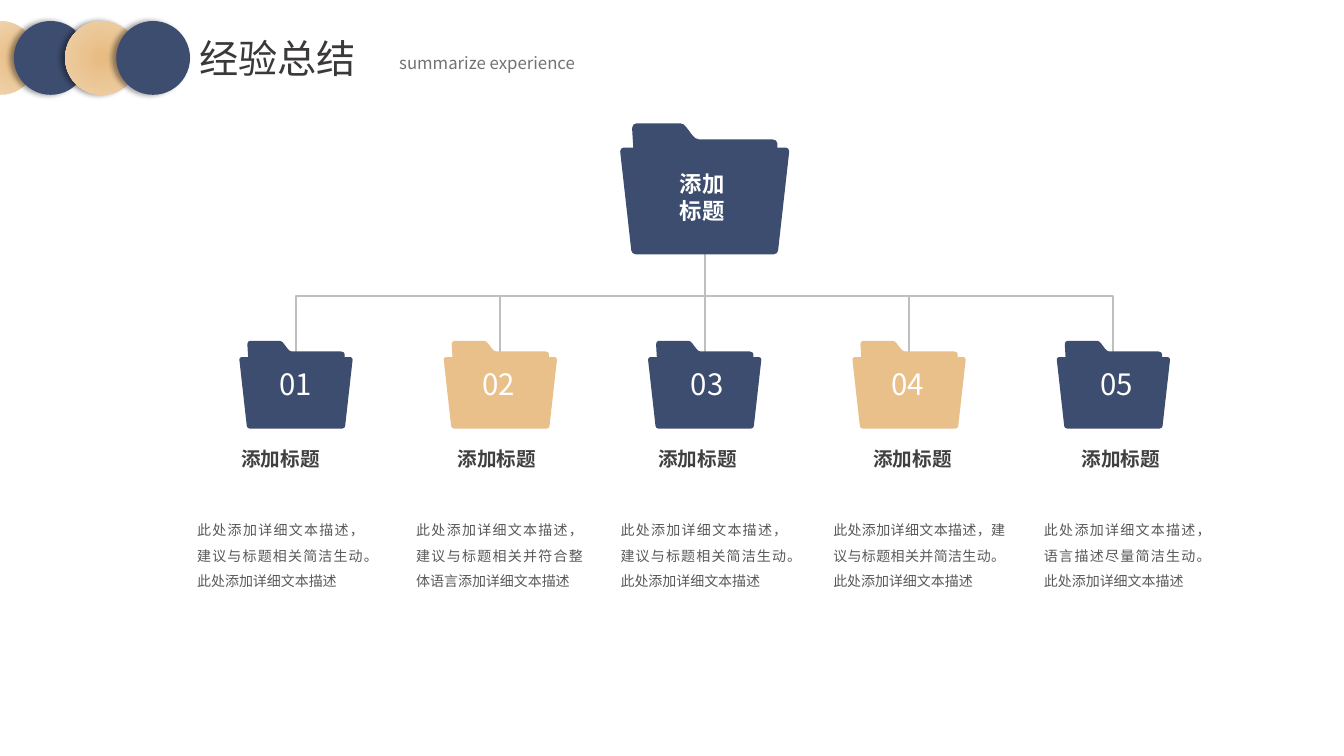
from lxml import etree
from pptx import Presentation
from pptx.dml.color import RGBColor
from pptx.enum import shapes, text
from pptx.oxml import parse_xml
from pptx.oxml.ns import nsdecls, qn
from pptx.util import Cm, Pt

NAVY = RGBColor(0x3D, 0x4D, 0x6F)
SAND = RGBColor(0xE9, 0xC0, 0x89)
SAND_INNER = RGBColor(0xE7, 0xBB, 0x81)
SAND_OUTER = RGBColor(0xEF, 0xD2, 0xAB)
WHITE = RGBColor(0xFF, 0xFF, 0xFF)
TITLE_GREY = RGBColor(0x3B, 0x38, 0x38)
SUBTITLE_GREY = RGBColor(0x76, 0x71, 0x71)
HEADING_GREY = RGBColor(0x40, 0x40, 0x40)
BODY_GREY = RGBColor(0x59, 0x59, 0x59)
LINE_GREY = RGBColor(0xBF, 0xBF, 0xBF)
FONT = "Noto Sans CJK SC"
SMALL_INSETS = (0.2, 0.1)

CENTER_X, PITCH = 17.76, 5.15
BUS_Y, BRANCH_END_Y = 7.45, 9.19
CIRCLE_SIZE, CIRCLE_TOP, CIRCLE_STEP = 1.86, 0.53, 1.29

# Outlines in cm from the top centre: one point is a line, three are a curve.
FOLDER_TAB = [
    [(1.83, 0.62)], [(1.83, 0.5)], [(1.83, 0.45), (1.78, 0.4), (1.7, 0.4)],
    [(-0.15, 0.4)], [(-0.2, 0.4), (-0.27, 0.36), (-0.31, 0.3)],
    [(-0.46, 0.1)], [(-0.5, 0.04), (-0.55, 0), (-0.61, 0)],
    [(-1.73, 0)], [(-1.78, 0), (-1.83, 0.05), (-1.83, 0.12)], [(-1.8, 0.62)],
]
FOLDER_BODY = [
    [(1.85, 3.2)], [(1.85, 3.25), (1.8, 3.3), (1.74, 3.3)],
    [(-1.74, 3.3)], [(-1.8, 3.3), (-1.85, 3.25), (-1.85, 3.2)],
    [(-2.13, 0.71)], [(-2.13, 0.66), (-2.1, 0.61), (-2.05, 0.61)],
    [(2.05, 0.61)], [(2.1, 0.61), (2.13, 0.66), (2.13, 0.71)],
]
HALF_CIRCLE = [
    [(0, 0)], [(0.51, 0), (0.93, 0.42), (0.93, 0.93)],
    [(0.93, 1.44), (0.51, 1.86), (0, 1.86)],
]

# Colour, number left, heading centre, description left and width, description
BRANCHES = [
    (NAVY, 5.93, 7.07, 4.77, 4.6, "此处添加详细文本描述，建议与标题相关简洁生动。此处添加详细文本描述"),
    (SAND, 11.05, 12.52, 10.29, 4.6, "此处添加详细文本描述，建议与标题相关并符合整体语言添加详细文本描述"),
    (NAVY, 16.3, 17.58, 15.44, 4.6, "此处添加详细文本描述，建议与标题相关简洁生动。此处添加详细文本描述"),
    (SAND, 21.35, 23, 20.8, 4.73, "此处添加详细文本描述，建议与标题相关并简洁生动。此处添加详细文本描述"),
    (NAVY, 26.62, 28.25, 26.11, 4.6, "此处添加详细文本描述，语言描述尽量简洁生动。此处添加详细文本描述"),
]


def add_text(slide, content, left, top, width, height, *, size, color, bold=False,
             align=text.PP_ALIGN.LEFT, spacing=None, insets=(0.25, 0.13), grow=True):
    box = slide.shapes.add_textbox(Cm(left), Cm(top), Cm(width), Cm(height))
    frame = box.text_frame
    frame.word_wrap = True
    frame.auto_size = text.MSO_AUTO_SIZE.SHAPE_TO_FIT_TEXT if grow else text.MSO_AUTO_SIZE.NONE
    frame.margin_left = frame.margin_right = Cm(insets[0])
    frame.margin_top = frame.margin_bottom = Cm(insets[1])
    paragraph = frame.paragraphs[0]
    paragraph.alignment = align
    paragraph.line_spacing = spacing
    run = paragraph.add_run()
    run.text = content
    font = run.font
    font.size, font.bold, font.name, font.color.rgb = Pt(size), bold, FONT, color
    east_asian = etree.SubElement(run._r.get_or_add_rPr(), qn("a:ea"))
    east_asian.set("typeface", FONT)


def add_outline(slide, segments, left=0, top=0, scale=1.0, closed=True):
    """Draw line segments, then join each group of three points into a curve."""
    start, *rest = [(Cm(left + scale * x), Cm(top + scale * y))
                    for segment in segments for x, y in segment]
    builder = slide.shapes.build_freeform(*start)
    builder.add_line_segments(rest, close=closed)
    shape = builder.convert_to_shape()
    shape.shadow.inherit = False
    lines = iter(shape._element.spPr.findall(".//" + qn("a:lnTo")))
    for segment in segments[1:]:
        group = [next(lines) for _ in segment]
        if len(group) == 3:
            curve = etree.Element(qn("a:cubicBezTo"))
            group[0].addprevious(curve)
            for line in group:
                curve.append(line[0])
                line.getparent().remove(line)
    return shape


def fill_solid(shape, color):
    shape.fill.solid()
    shape.fill.fore_color.rgb = color
    shape.line.fill.background()


def fill_radial(shape):
    shape.fill.gradient()
    for stop, color in zip(shape.fill.gradient_stops, (SAND_INNER, SAND_OUTER)):
        stop.color.rgb = color
    linear = shape._element.spPr.find(".//" + qn("a:lin"))
    linear.getparent().replace(linear, parse_xml(
        f'<a:path {nsdecls("a")} path="circle">'
        '<a:fillToRect l="50000" t="50000" r="50000" b="50000"/></a:path>'))
    shape.line.fill.background()


def add_left_shadow(shape):
    shape._element.spPr.find(qn("a:effectLst")).append(parse_xml(
        f'<a:outerShdw {nsdecls("a")} blurRad="50800" dist="38100" dir="10800000" '
        'algn="r" rotWithShape="0"><a:srgbClr val="000000"><a:alpha val="40000"/>'
        '</a:srgbClr></a:outerShdw>'))


def add_folder(slide, center_x, top, color, scale=1.0):
    for outline in (FOLDER_TAB, FOLDER_BODY):
        fill_solid(add_outline(slide, outline, center_x, top, scale), color)


def style_branch_line(line):
    line.color.rgb = LINE_GREY
    line.width = Pt(1.5)


def add_vertical_line(slide, x, top, bottom):
    connector = slide.shapes.add_connector(
        shapes.MSO_CONNECTOR.STRAIGHT, Cm(x), Cm(top), Cm(x), Cm(bottom))
    style_branch_line(connector.line)
    etree.SubElement(connector._element.spPr, qn("a:effectLst"))


def add_header(slide):
    fill_radial(add_outline(slide, HALF_CIRCLE, top=CIRCLE_TOP))
    for index in range(3):
        circle = slide.shapes.add_shape(
            shapes.MSO_SHAPE.OVAL, Cm(0.35 + index * CIRCLE_STEP), Cm(CIRCLE_TOP),
            Cm(CIRCLE_SIZE), Cm(CIRCLE_SIZE))
        circle.shadow.inherit = False
        if index == 1:
            fill_radial(circle)
        else:
            fill_solid(circle, NAVY)
        add_left_shadow(circle)
    add_text(slide, "经验总结", 4.78, 0.74, 5.03, 1.45, size=28, color=TITLE_GREY,
             align=text.PP_ALIGN.JUSTIFY)
    add_text(slide, "summarize experience", 9.81, 1.21, 9.25, 0.76, size=12, color=SUBTITLE_GREY)


def add_branch_lines(slide, columns):
    first, *inner, last = columns
    corners = [(first, BRANCH_END_Y), (first, BUS_Y), (last, BUS_Y), (last, BRANCH_END_Y)]
    bracket = add_outline(slide, [[corner] for corner in corners], closed=False)
    bracket.fill.background()
    style_branch_line(bracket.line)
    for x in inner:
        add_vertical_line(slide, x, 6.38 if x == CENTER_X else BUS_Y, BRANCH_END_Y)


def add_branch(slide, number, center_x, branch):
    color, number_left, heading_center, body_left, body_width, description = branch
    add_folder(slide, center_x, 8.59, color, scale=0.67)
    add_text(slide, f"{number:02}", number_left, 9.12, 3.05, 1.09, size=21, color=WHITE,
             align=text.PP_ALIGN.CENTER, insets=SMALL_INSETS)
    add_text(slide, "添加标题", heading_center - 2.25, 11.25, 4.5, 0.61, size=14,
             color=HEADING_GREY, bold=True, align=text.PP_ALIGN.CENTER, insets=(0, 0))
    add_text(slide, description, body_left, 12.84, body_width, 2.11, size=10, color=BODY_GREY,
             align=text.PP_ALIGN.JUSTIFY, spacing=1.5, insets=SMALL_INSETS)


def main():
    presentation = Presentation()
    presentation.slide_width, presentation.slide_height = Cm(33.87), Cm(19.05)
    slide = presentation.slides.add_slide(presentation.slide_layouts[6])
    add_header(slide)
    columns = [CENTER_X + PITCH * offset for offset in range(-2, 3)]
    add_branch_lines(slide, columns)
    add_folder(slide, CENTER_X, 3.11, NAVY)
    add_text(slide, "添加标题", 16.94, 4.28, 1.52, 1.52, size=16, color=WHITE, bold=True,
             align=text.PP_ALIGN.CENTER, insets=(0, 0), grow=False)
    for number, (center_x, branch) in enumerate(zip(columns, BRANCHES), start=1):
        add_branch(slide, number, center_x, branch)
    presentation.save("out.pptx")


if __name__ == "__main__":
    main()
